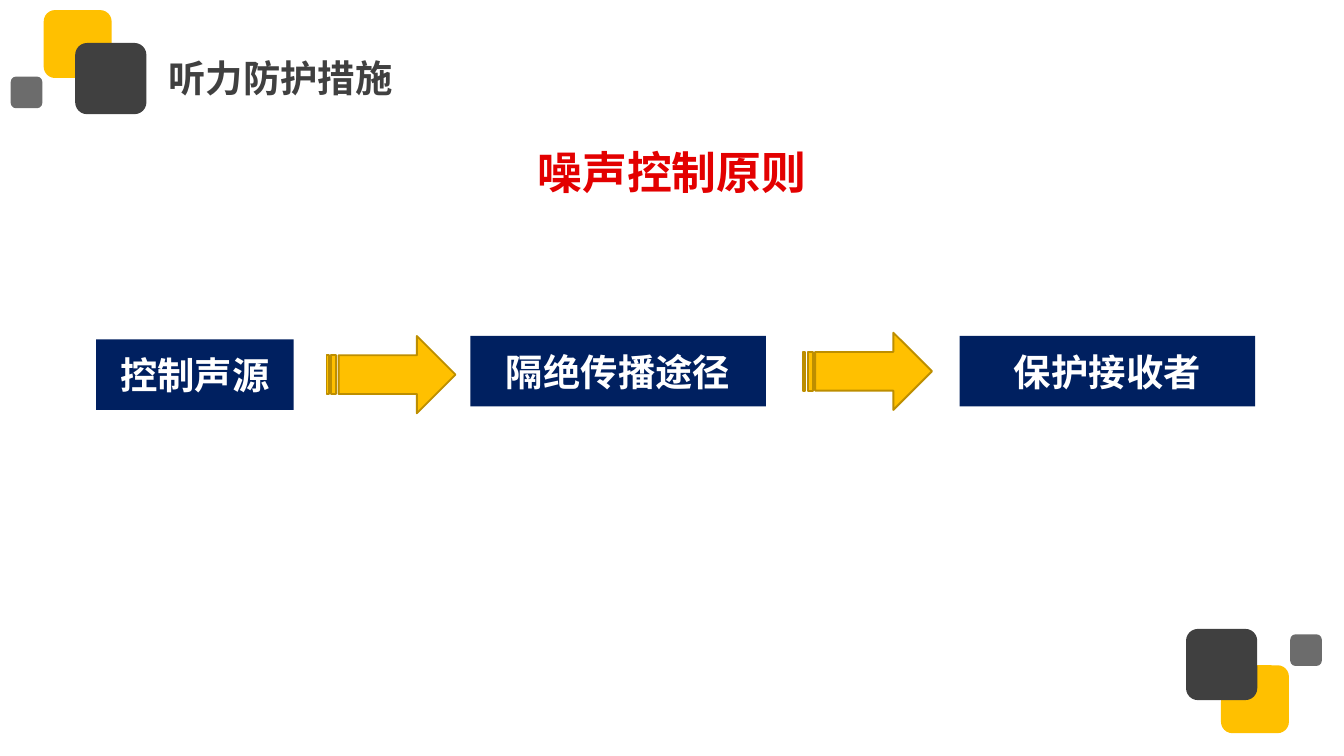
from dataclasses import dataclass

from lxml.etree import SubElement
from pptx import Presentation
from pptx.dml.color import RGBColor
from pptx.enum.shapes import MSO_SHAPE
from pptx.enum.text import MSO_ANCHOR, PP_ALIGN
from pptx.oxml.ns import qn
from pptx.shapes.autoshape import Shape
from pptx.slide import Slide
from pptx.text.text import TextFrame
from pptx.util import Emu, Pt

EMU_PER_PX = 4572


@dataclass(frozen=True)
class Theme:
    font: str = "Noto Sans CJK SC"
    yellow: str = "FFC000"
    yellow_edge: str = "BD8E00"
    charcoal: str = "404040"
    navy: str = "002060"
    red: str = "E30000"
    white: str = "FFFFFF"
    body_size: int = 20
    headline_size: int = 24
    edge_width: int = 1


@dataclass(frozen=True)
class Box:
    left: int
    top: int
    width: int
    height: int


@dataclass(frozen=True)
class Tile:
    box: Box
    color: str
    opacity: int = 100


@dataclass(frozen=True)
class Step:
    label: str
    box: Box


@dataclass(frozen=True)
class Heading:
    text: str
    box: Box
    size: int
    color: str
    align: PP_ALIGN


THEME = Theme()
SLIDE_WIDTH, SLIDE_HEIGHT = 2000, 1125

TILES = [
    Tile(Box(65, 15, 101, 101), THEME.yellow),
    Tile(Box(112, 64, 106, 106), THEME.charcoal),
    Tile(Box(16, 114, 47, 47), THEME.charcoal, 77),
    Tile(Box(1817, 990, 101, 101), THEME.yellow),
    Tile(Box(1765, 936, 106, 106), THEME.charcoal),
    Tile(Box(1920, 944, 47, 47), THEME.charcoal, 77),
]
HEADINGS = [
    Heading("听力防护措施", Box(231, 72, 652, 88), THEME.body_size, THEME.charcoal, PP_ALIGN.LEFT),
    Heading("噪声控制原则", Box(0, 206, SLIDE_WIDTH, 100), THEME.headline_size, THEME.red, PP_ALIGN.CENTER),
]
STEPS = [
    Step("控制声源", Box(143, 505, 294, 105)),
    Step("隔绝传播途径", Box(700, 500, 440, 105)),
    Step("保护接收者", Box(1428, 500, 440, 105)),
]
ARROWS = [Box(486, 500, 192, 115), Box(1195, 495, 192, 115)]


def px(length: int) -> Emu:
    return Emu(length * EMU_PER_PX)


def place(box: Box) -> tuple[Emu, Emu, Emu, Emu]:
    return px(box.left), px(box.top), px(box.width), px(box.height)


def write_text(frame: TextFrame, text: str, size: int, color: str, align: PP_ALIGN) -> None:
    frame.text = text
    frame.word_wrap = True
    para = frame.paragraphs[0]
    para.alignment = align
    span = para.runs[0]
    span.font.size = Pt(size)
    span.font.bold = True
    span.font.color.rgb = RGBColor.from_string(color)
    span.font.name = THEME.font
    SubElement(span.font._element, qn("a:ea"), typeface=THEME.font)


def draw_shape(page: Slide, kind: MSO_SHAPE, box: Box, color: str) -> Shape:
    shape = page.shapes.add_shape(kind, *place(box))
    shape.shadow.inherit = False
    shape.fill.solid()
    shape.fill.fore_color.rgb = RGBColor.from_string(color)
    shape.line.fill.background()
    return shape


def draw_tile(page: Slide, tile: Tile) -> None:
    shape = draw_shape(page, MSO_SHAPE.ROUNDED_RECTANGLE, tile.box, tile.color)
    if tile.opacity < 100:
        color = shape._element.spPr.find(qn("a:solidFill")).find(qn("a:srgbClr"))
        SubElement(color, qn("a:alpha"), val=str(tile.opacity * 1000))


def draw_heading(page: Slide, heading: Heading) -> None:
    text_box = page.shapes.add_textbox(*place(heading.box))
    write_text(text_box.text_frame, heading.text, heading.size, heading.color, heading.align)


def draw_step(page: Slide, step: Step) -> None:
    shape = draw_shape(page, MSO_SHAPE.RECTANGLE, step.box, THEME.navy)
    shape.text_frame.vertical_anchor = MSO_ANCHOR.MIDDLE
    write_text(shape.text_frame, step.label, THEME.body_size, THEME.white, PP_ALIGN.CENTER)


def draw_arrow(page: Slide, box: Box) -> None:
    shape = draw_shape(page, MSO_SHAPE.STRIPED_RIGHT_ARROW, box, THEME.yellow)
    shape.line.color.rgb = RGBColor.from_string(THEME.yellow_edge)
    shape.line.width = Pt(THEME.edge_width)


def main() -> None:
    deck = Presentation()
    deck.slide_width, deck.slide_height = px(SLIDE_WIDTH), px(SLIDE_HEIGHT)
    page = deck.slides.add_slide(deck.slide_layouts[6])
    for tile in TILES:
        draw_tile(page, tile)
    for heading in HEADINGS:
        draw_heading(page, heading)
    for step in STEPS:
        draw_step(page, step)
    for arrow in ARROWS:
        draw_arrow(page, arrow)
    deck.save("out.pptx")


if __name__ == "__main__":
    main()
